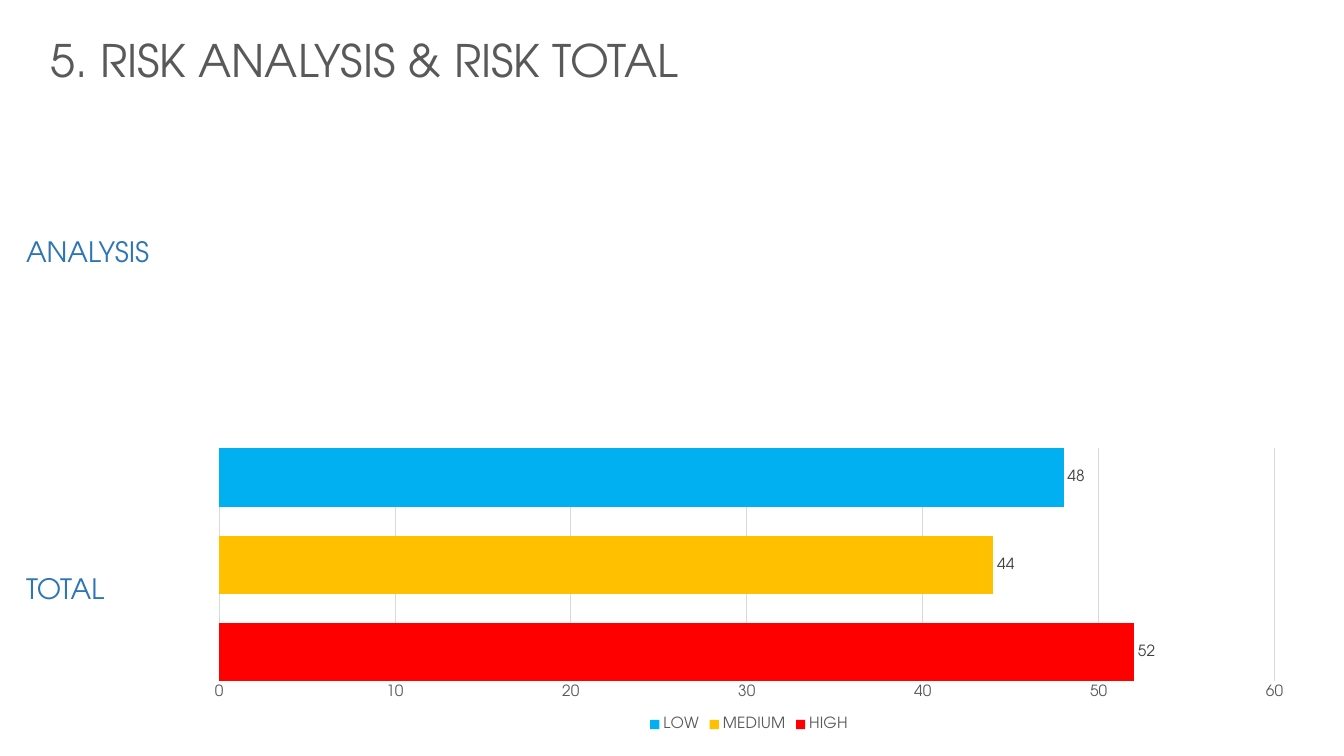
from lxml import etree
from pptx import Presentation
from pptx.chart.data import CategoryChartData
from pptx.dml.color import RGBColor
from pptx.enum.chart import XL_CHART_TYPE, XL_LABEL_POSITION, XL_LEGEND_POSITION, XL_TICK_MARK
from pptx.enum.text import MSO_ANCHOR, MSO_AUTO_SIZE, PP_ALIGN
from pptx.oxml.ns import qn
from pptx.util import Inches, Pt

FONT = "TeX Gyre Adventor"
COLORS = {
    "title": "595959",
    "heading": "2E75B6",
    "axis": "595959",
    "label": "404040",
    "grid": "D9D9D9",
    "background": "FFFFFF",
}
RISKS = [("HIGH", 52, "FF0000"), ("MEDIUM", 44, "FFC000"), ("LOW", 48, "00B0F0")]
HEADINGS = [("ANALYSIS", 2.28, 1.46), ("TOTAL", 5.62, 1.02)]


def rgb(value):
    return RGBColor.from_string(value)


def set_font(font, size, color):
    for name, value in {"name": FONT, "size": Pt(size), "bold": False}.items():
        setattr(font, name, value)
    font.color.rgb = rgb(color)


def set_fill(fill, color):
    fill.solid()
    fill.fore_color.rgb = rgb(color)


def write_line(box, text, size, color):
    """Fill a box with one unwrapped, left-aligned line of text."""
    frame = box.text_frame
    settings = {
        "word_wrap": False,
        "auto_size": MSO_AUTO_SIZE.SHAPE_TO_FIT_TEXT,
        "vertical_anchor": MSO_ANCHOR.TOP,
    }
    for name, value in settings.items():
        setattr(frame, name, value)
    para = frame.paragraphs[0]
    para.alignment = PP_ALIGN.LEFT
    span = para.add_run()
    span.text = text
    set_font(span.font, size, color)


def add_title(page, text):
    title = page.shapes.title
    position = {"left": 0.4, "top": 0.27, "width": 6.59, "height": 0.64}
    for name, value in position.items():
        setattr(title, name, Inches(value))
    write_line(title, text, 32, COLORS["title"])


def add_heading(page, text, top, width):
    box = page.shapes.add_textbox(Inches(0.16), Inches(top), Inches(width), Inches(0.44))
    write_line(box, text, 20, COLORS["heading"])


def fill_chart_area(chart, color):
    """Give the chart area a solid fill and no outline."""
    area = etree.Element(qn("c:spPr"))
    fill = etree.SubElement(area, qn("a:solidFill"))
    etree.SubElement(fill, qn("a:srgbClr"), val=color)
    line = etree.SubElement(area, qn("a:ln"))
    etree.SubElement(line, qn("a:noFill"))
    chart.element.find(qn("c:chart")).addnext(area)


def format_axes(chart):
    chart.category_axis.visible = False
    axis = chart.value_axis
    settings = {
        "minimum_scale": 0,
        "major_tick_mark": XL_TICK_MARK.NONE,
        "minor_tick_mark": XL_TICK_MARK.NONE,
        "has_major_gridlines": True,
    }
    for name, value in settings.items():
        setattr(axis, name, value)
    axis.format.line.fill.background()
    grid = axis.major_gridlines.format.line
    grid.width = Pt(0.75)
    grid.color.rgb = rgb(COLORS["grid"])
    set_font(axis.tick_labels.font, 11, COLORS["axis"])


def format_series(series, color):
    set_fill(series.format.fill, color)
    series.invert_if_negative = False
    labels = series.data_labels
    labels.show_value = True
    labels.position = XL_LABEL_POSITION.OUTSIDE_END
    set_font(labels.font, 11, COLORS["label"])


def add_risk_chart(page):
    data = CategoryChartData(number_format="0")
    data.categories = ["1"]
    for name, total, _ in RISKS:
        data.add_series(name, [total])
    chart = page.shapes.add_chart(
        XL_CHART_TYPE.BAR_CLUSTERED,
        Inches(1.91), Inches(4.39), Inches(11.04), Inches(2.91), data,
    ).chart
    chart.has_title = False
    chart.font.name = FONT
    chart.font.size = Pt(11)
    fill_chart_area(chart, COLORS["background"])
    format_axes(chart)

    plot = chart.plots[0]
    for name, value in {"gap_width": 0, "overlap": -50, "vary_by_categories": False}.items():
        setattr(plot, name, value)
    for series, (_, _, color) in zip(plot.series, RISKS):
        format_series(series, color)

    chart.has_legend = True
    chart.legend.position = XL_LEGEND_POSITION.BOTTOM
    chart.legend.include_in_layout = False
    set_font(chart.legend.font, 11, COLORS["axis"])


def main():
    deck = Presentation()
    deck.slide_width, deck.slide_height = Inches(13.33), Inches(7.5)
    page = deck.slides.add_slide(deck.slide_layouts[5])
    set_fill(page.background.fill, COLORS["background"])
    add_title(page, "5. RISK ANALYSIS & RISK TOTAL")
    add_risk_chart(page)
    for text, top, width in HEADINGS:
        add_heading(page, text, top, width)
    deck.save("out.pptx")


if __name__ == "__main__":
    main()
